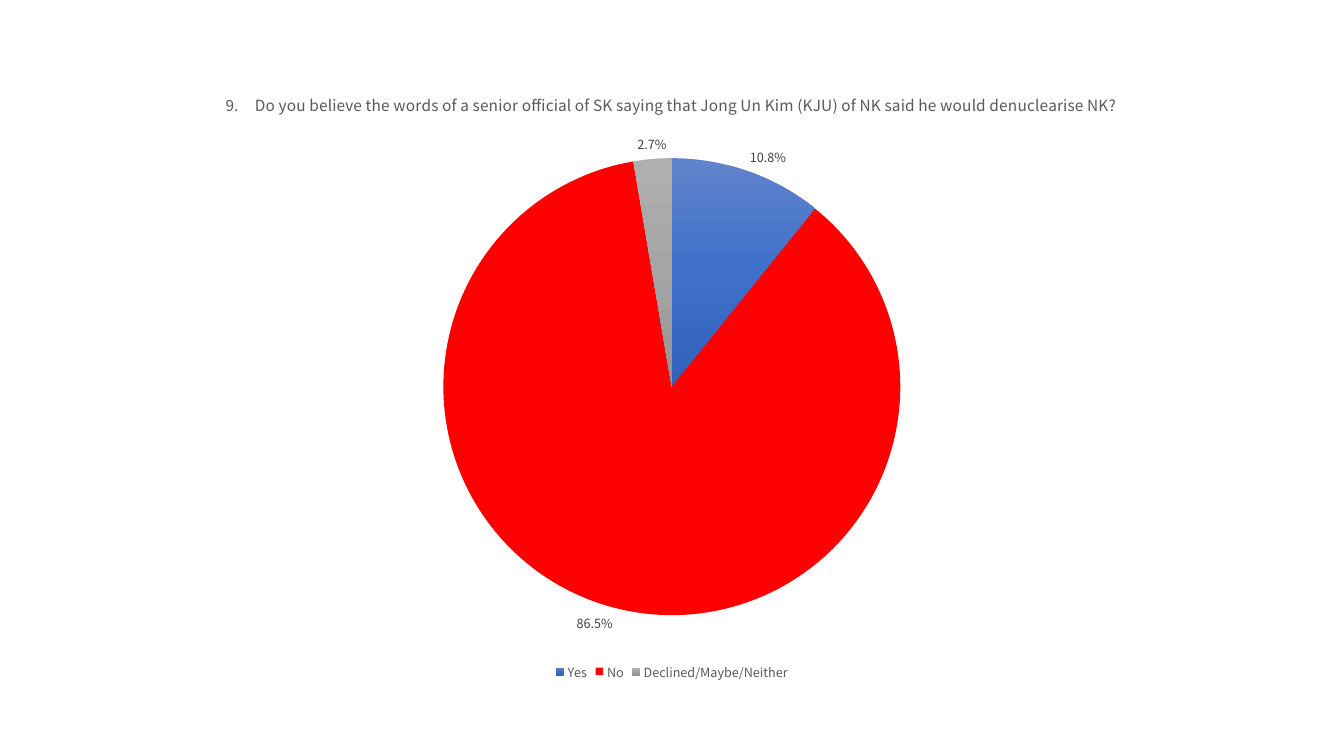
from copy import deepcopy
from pptx import Presentation
from pptx import util as u
from pptx.chart.data import CategoryChartData
from pptx.dml.color import RGBColor
from pptx.enum import chart as ch
from pptx.oxml import parse_xml
from pptx.oxml.ns import nsdecls

# Content
FONT = "Noto Sans CJK KR"
NUM = "9."
ASK = ("Do you believe the words of a senior official of SK saying that "
       "Jong Un Kim (KJU) of NK said he would denuclearise NK?")
GREY = "595959"
DARK = "404040"
# Answer, share, colours from top to bottom
PARTS = [
    ("Yes", 0.108, ["6183CB", "3E70CA", "3062BB"]),
    ("No", 0.865, ["FF0000"]),
    ("Declined/Maybe/Neither", 0.027, ["AFAFAF", "A5A5A5", "939393"]),
]
BOX = (50.4, 50.4, 859, 438.5)
PLOT = {"x": 0.31, "y": 0.14, "w": 0.38, "h": 0.75}


def color(code):
    return RGBColor.from_string(code)


def style(font, size, code):
    font.name, font.size, font.bold = FONT, u.Pt(size), False
    font.color.rgb = color(code)


def write(para, words, size=11, code=GREY, gap=0):
    run = para.add_run()
    run.text = words
    style(run.font, size, code)
    if gap:
        run.font._element.set("spc", str(gap * 100))


def paint(form, codes):
    form.line.fill.background()
    fill = form.fill
    if len(codes) == 1:
        fill.solid()
        fill.fore_color.rgb = color(codes[0])
        return
    fill.gradient()
    fill.gradient_angle = 270
    last = form._element.xpath("c:spPr/a:gradFill/a:gsLst/a:gs")[-1]
    for _ in codes[2:]:
        last.addnext(deepcopy(last))
    for i, (stop, code) in enumerate(zip(fill.gradient_stops, codes)):
        stop.position = i / (len(codes) - 1)
        stop.color.rgb = color(code)


# Slide
deck = Presentation()
deck.slide_width, deck.slide_height = u.Pt(960), u.Pt(540)
slide = deck.slides.add_slide(deck.slide_layouts[6])

# Pie chart
data = CategoryChartData(number_format="0.0%")
data.categories = [name for name, _, _ in PARTS]
data.add_series(f"{NUM} {ASK}", [share for _, share, _ in PARTS])
pie = slide.shapes.add_chart(ch.XL_CHART_TYPE.PIE, *map(u.Pt, BOX), data).chart
style(pie.font, 10, "000000")

# Title: number, wide gap, question
pie.has_title = True
head = pie.chart_title.text_frame.paragraphs[0]
write(head, NUM)
write(head, " ", gap=9)
write(head, ASK)
pie.chart_title.include_in_layout = False

# Legend
pie.has_legend = True
pie.legend.position = ch.XL_LEGEND_POSITION.BOTTOM
pie.legend.include_in_layout = False
style(pie.legend.font, 9, GREY)

# Slices
plot = pie.plots[0]
plot.vary_by_categories = True
for i, (_, _, codes) in enumerate(PARTS):
    paint(plot.series[0].points[i].format, codes)

# Labels
plot.has_data_labels = True
tags = plot.data_labels
tags.show_value, tags.show_percentage = True, False
tags.number_format, tags.number_format_is_linked = "0.0%", False
tags.position = ch.XL_LABEL_POSITION.OUTSIDE_END
style(tags.font, 9, DARK)

# Place of the pie inside the chart
area = pie._chartSpace.chart.plotArea
for old in area.xpath("c:layout"):
    area.remove(old)
modes = '<c:xMode val="edge"/><c:yMode val="edge"/>'
sizes = "".join(f'<c:{key} val="{val}"/>' for key, val in PLOT.items())
area.insert(0, parse_xml(
    f'<c:layout {nsdecls("c")}><c:manualLayout><c:layoutTarget val="inner"/>'
    f'{modes}{sizes}</c:manualLayout></c:layout>'))

deck.save("out.pptx")
